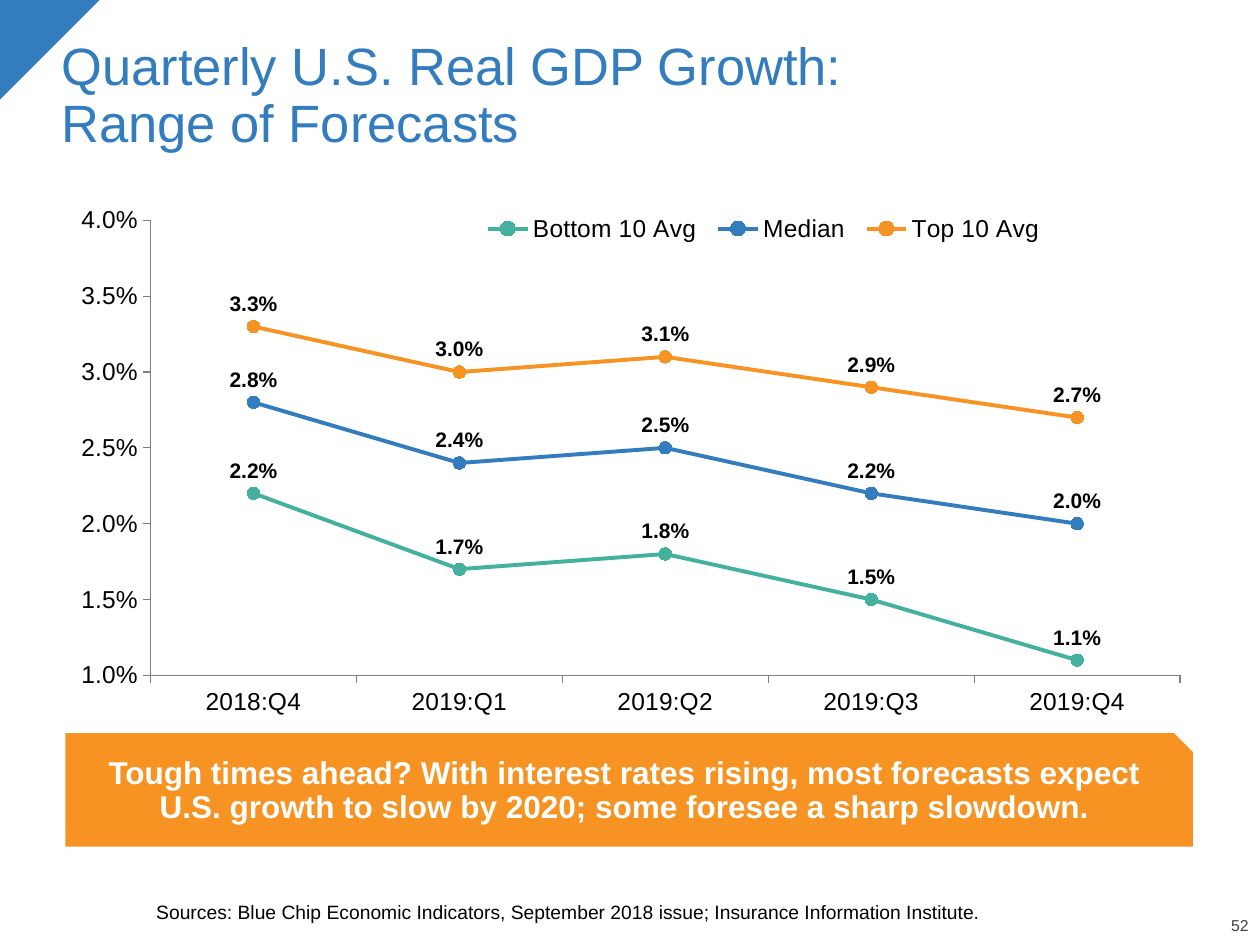
from lxml import etree
from pptx import Presentation, util as u
from pptx.chart.data import CategoryChartData
from pptx.dml.color import RGBColor
from pptx.enum import chart as kinds, shapes, text

BLUE, ORANGE, GREEN = "337DBE", "F69322", "43B19E"
BLACK, WHITE, GREY, AXIS_GREY = "000000", "FFFFFF", "404040", "808080"
FONT = "Arial"
PERCENT = "0.0%"
CHART_NS = "http://schemas.openxmlformats.org/drawingml/2006/chart"

QUARTERS = ["2018:Q4", "2019:Q1", "2019:Q2", "2019:Q3", "2019:Q4"]
FORECASTS = [
    ("Bottom 10 Avg", GREEN, [0.022, 0.017, 0.018, 0.015, 0.011]),
    ("Median", BLUE, [0.028, 0.024, 0.025, 0.022, 0.02]),
    ("Top 10 Avg", ORANGE, [0.033, 0.03, 0.031, 0.029, 0.027]),
]


def color(value):
    return RGBColor.from_string(value)


def place(left, top, width, height):
    return [u.Cm(length) for length in (left, top, width, height)]


def style_font(font, size, shade=BLACK, bold=False):
    font.name, font.size, font.bold = FONT, u.Pt(size), bold
    font.color.rgb = color(shade)


def write(box, words, size, shade, anchor, align=text.PP_ALIGN.LEFT,
          bold=False, insets=(0, 0, 0, 0)):
    frame = box.text_frame
    frame.word_wrap = True
    frame.vertical_anchor = anchor
    (frame.margin_left, frame.margin_top,
     frame.margin_right, frame.margin_bottom) = [u.Cm(inset) for inset in insets]
    para = frame.paragraphs[0]
    para.text = words
    para.alignment = align
    para.line_spacing = 0.9
    style_font(para.font, size, shade, bold)


def add_text(page, position, *args, **options):
    write(page.shapes.add_textbox(*place(*position)), *args, **options)


def add_block(page, kind, position, fill):
    block = page.shapes.add_shape(kind, *place(*position))
    block.shadow.inherit = False
    block.fill.solid()
    block.fill.fore_color.rgb = color(fill)
    block.line.fill.background()
    return block


def make_layout(inner=False, **fractions):
    """Manual chart layout, in fractions of the chart's size."""
    layout = etree.Element(f"{{{CHART_NS}}}layout")
    manual = etree.SubElement(layout, f"{{{CHART_NS}}}manualLayout")
    settings = {"layoutTarget": "inner"} if inner else {}
    settings.update(xMode="edge", yMode="edge", **fractions)
    for tag, value in settings.items():
        etree.SubElement(manual, f"{{{CHART_NS}}}{tag}").set("val", str(value))
    return layout


def style_axis(axis):
    axis.has_major_gridlines = False
    axis.major_tick_mark = kinds.XL_TICK_MARK.OUTSIDE
    axis.minor_tick_mark = kinds.XL_TICK_MARK.NONE
    axis.format.line.color.rgb = color(AXIS_GREY)
    axis.format.line.width = u.Pt(0.75)
    style_font(axis.tick_labels.font, 14)


def style_series(series, shade):
    series.smooth = False
    series.format.line.color.rgb = color(shade)
    series.format.line.width = u.Pt(2.25)
    marker = series.marker
    marker.style, marker.size = kinds.XL_MARKER_STYLE.CIRCLE, 7
    marker.format.fill.solid()
    marker.format.fill.fore_color.rgb = color(shade)
    marker.format.line.color.rgb = color(shade)
    labels = series.data_labels
    labels.show_value = True
    labels.position = kinds.XL_LABEL_POSITION.ABOVE
    labels.number_format, labels.number_format_is_linked = PERCENT, False
    style_font(labels.font, 12, bold=True)


def add_forecast_chart(page, position):
    data = CategoryChartData(number_format=PERCENT)
    data.categories = QUARTERS
    for name, _, values in FORECASTS:
        data.add_series(name, values)
    chart = page.shapes.add_chart(
        kinds.XL_CHART_TYPE.LINE_MARKERS, *place(*position), data).chart
    chart.has_title = False
    style_font(chart.font, 18)
    chart.plots[0].vary_by_categories = False
    for series, (_, shade, _) in zip(chart.plots[0].series, FORECASTS):
        style_series(series, shade)

    # Axes
    style_axis(chart.category_axis)
    axis = chart.value_axis
    style_axis(axis)
    axis.minimum_scale, axis.maximum_scale, axis.major_unit = 0.01, 0.04, 0.005
    axis.tick_labels.number_format = PERCENT
    axis.tick_labels.number_format_is_linked = False

    # Legend inside the top of the plot
    chart.has_legend = True
    legend = chart.legend
    legend.position = kinds.XL_LEGEND_POSITION.TOP
    legend.include_in_layout = False
    style_font(legend.font, 14)
    tree = legend._element
    for old in tree.findall(f"{{{CHART_NS}}}layout"):
        tree.remove(old)
    tree.find(f"{{{CHART_NS}}}legendPos").addnext(
        make_layout(x=0.36, y=0.05, w=0.5, h=0.07))

    # Plot area
    area = chart._chartSpace.chart.plotArea
    for old in area.findall(f"{{{CHART_NS}}}layout"):
        area.remove(old)
    area.insert(0, make_layout(inner=True, x=0.08, y=0.07, w=0.89, h=0.84))


def main():
    deck = Presentation()
    deck.slide_width, deck.slide_height = u.Cm(25.4), u.Cm(19.05)
    page = deck.slides.add_slide(deck.slide_layouts[6])

    # Corner and page number
    corner = add_block(page, shapes.MSO_SHAPE.RIGHT_TRIANGLE,
                       (-0.02, 0, 2.03, 2.03), BLUE)
    corner.rotation = 90
    add_text(page, (23.95, 18.52, 1.22, 0.33), "52", 9, GREY,
             text.MSO_ANCHOR.BOTTOM, text.PP_ALIGN.RIGHT)

    # Title and sources
    add_text(page, (0.99, 0.64, 22.2, 2.64),
             "Quarterly U.S. Real GDP Growth:\vRange of Forecasts", 30, BLUE,
             text.MSO_ANCHOR.MIDDLE, insets=(0.25, 0.13, 0.25, 0.13))
    add_text(page, (3.15, 17.48, 21.34, 1.14),
             "Sources: Blue Chip Economic Indicators, September 2018 issue; "
             "Insurance Information Institute.", 11, BLACK,
             text.MSO_ANCHOR.BOTTOM)

    # Forecast lines
    add_forecast_chart(page, (1.17, 3.68, 23.32, 10.92))

    # Takeaway banner
    banner = add_block(page, shapes.MSO_SHAPE.SNIP_1_RECTANGLE,
                       (1.32, 14.78, 22.73, 2.29), ORANGE)
    write(banner, "Tough times ahead? With interest rates rising, most forecasts "
          "expect U.S. growth to slow by 2020; some foresee a sharp slowdown.",
          18, WHITE, text.MSO_ANCHOR.MIDDLE, text.PP_ALIGN.CENTER, bold=True,
          insets=(0.25, 0.13, 0.25, 0.25))

    deck.save("out.pptx")


if __name__ == "__main__":
    main()
